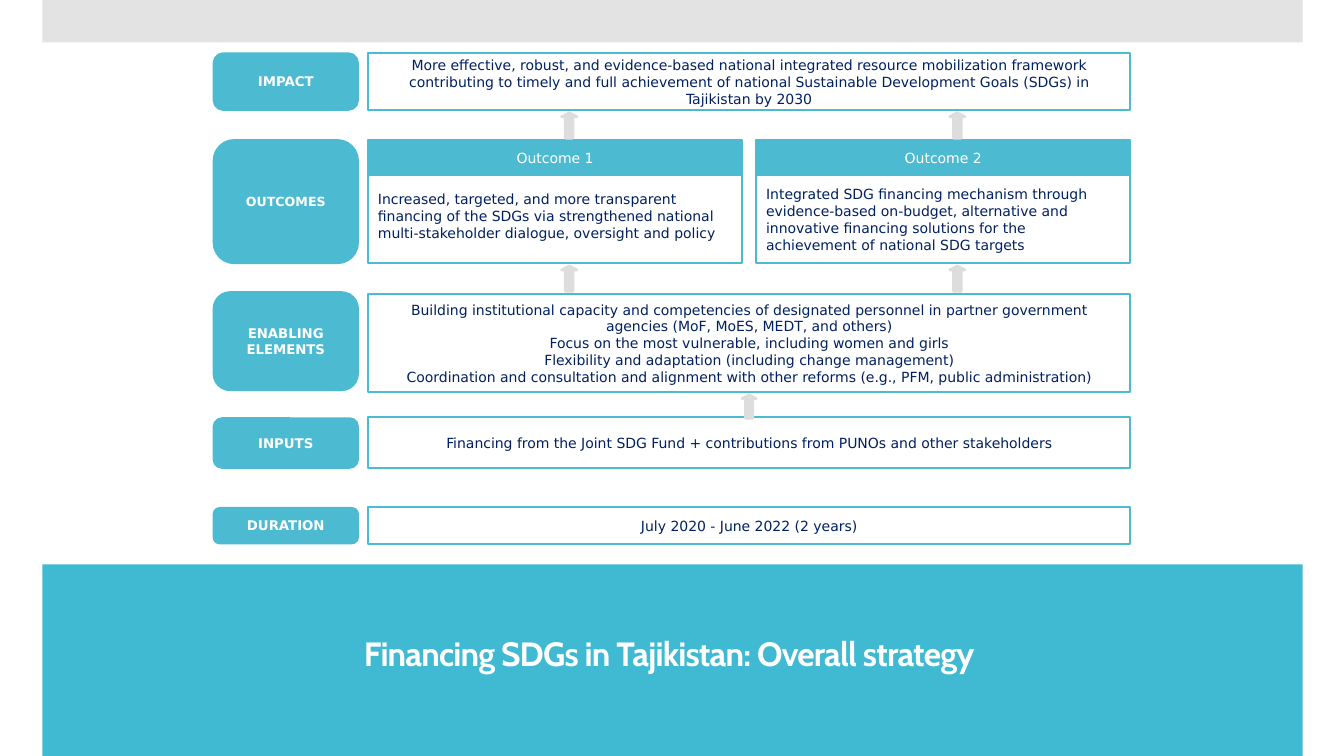
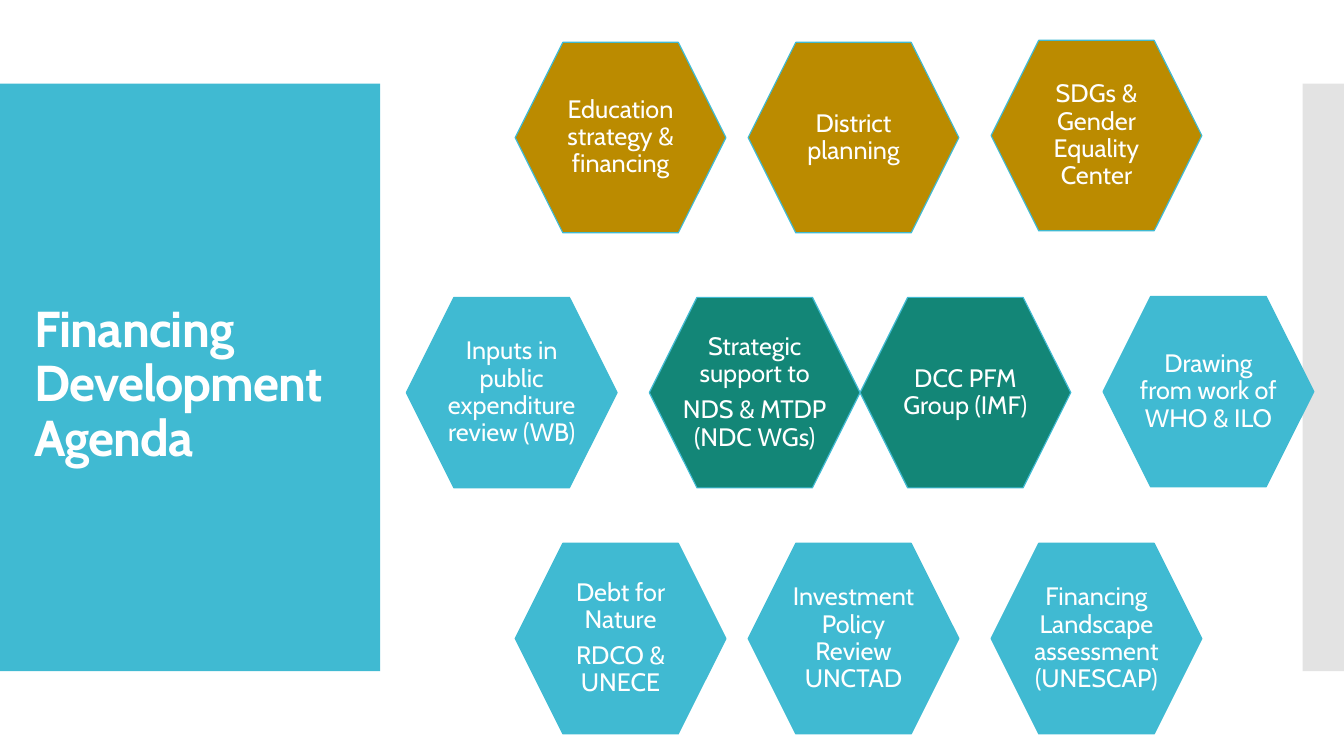
from pptx import Presentation
from pptx import util as u
from pptx.dml import color
from pptx.enum import shapes, text

BLUE = color.RGBColor(0x40, 0xBA, 0xD2)
SKY = color.RGBColor(0x4C, 0xBB, 0xD2)
GOLD = color.RGBColor(0xBB, 0x8B, 0x00)
GREEN = color.RGBColor(0x13, 0x86, 0x77)
NAVY = color.RGBColor(0x00, 0x20, 0x60)
PALE = color.RGBColor(0xE3, 0xE3, 0xE3)
GREY = color.RGBColor(0xDD, 0xDD, 0xDD)
WHITE = color.RGBColor(0xFF, 0xFF, 0xFF)

KIND = shapes.MSO_SHAPE
LEFT, MID = text.PP_ALIGN.LEFT, text.PP_ALIGN.CENTER
HEAD = {"name": "Cabin", "bold": True}
CELL = {"name": "Cabin", "size": u.Pt(18)}
BODY = {"name": "DejaVu Sans", "size": u.Pt(10)}
TAG = {"name": "DejaVu Sans", "size": u.Pt(9.5), "bold": True}
TIGHT = {"line_spacing": 0.9, "space_after": u.Pt(6.3)}

TAG_X, TAG_W = 2.12, 1.43
BOX_X, BOX_W = 3.65, 7.56
HALF_W = 3.71
HALF_XS = (BOX_X, BOX_X + BOX_W - HALF_W)
HEX_W, HEX_H = 2.09, 1.89

ROWS = [
    ("IMPACT", 0.53, 0.56, 0.53, 0.56,
     ["More effective, robust, and evidence-based national integrated resource "
      "mobilization framework contributing to timely and full achievement of "
      "national Sustainable Development Goals (SDGs) in Tajikistan by 2030"]),
    ("OUTCOMES", 1.39, 1.22, 0, 0, []),
    ("ENABLING ELEMENTS", 2.9, 0.97, 2.92, 0.97,
     ["Building institutional capacity and competencies of designated personnel "
      "in partner government agencies (MoF, MoES, MEDT, and others)",
      "Focus on the most vulnerable, including women and girls",
      "Flexibility and adaptation (including change management)",
      "Coordination and consultation and alignment with other reforms "
      "(e.g., PFM, public administration)"]),
    ("INPUTS", 4.15, 0.49, 4.14, 0.5,
     ["Financing from the Joint SDG Fund + contributions from PUNOs and other "
      "stakeholders"]),
    ("DURATION", 5.04, 0.35, 5.03, 0.37, ["July 2020 - June 2022 (2 years)"]),
]

GOALS = [
    ("Outcome 1", 0.11,
     "Increased, targeted, and more transparent financing of the SDGs via "
     "strengthened national multi-stakeholder dialogue, oversight and policy"),
    ("Outcome 2", 0.05,
     "Integrated SDG financing mechanism through evidence-based on-budget, "
     "alternative and innovative financing solutions for the achievement of "
     "national SDG targets"),
]

CELLS = [
    (5.11, 0.42, GOLD, ["Education strategy & financing"]),
    (7.42, 0.42, GOLD, ["District planning"]),
    (9.83, 0.4, GOLD, ["SDGs & Gender Equality Center"]),
    (4.03, 2.95, BLUE, ["Inputs in public expenditure review (WB)"]),
    (6.44, 2.95, GREEN, ["Strategic support to", "NDS & MTDP (NDC WGs)"]),
    (8.53, 2.95, GREEN, ["DCC PFM Group (IMF)"]),
    (10.94, 2.94, BLUE, ["Drawing from work of WHO & ILO"]),
    (5.11, 5.39, BLUE, ["Debt for Nature", "RDCO & UNECE"]),
    (7.42, 5.39, BLUE, ["Investment Policy Review UNCTAD"]),
    (9.83, 5.39, BLUE, ["Financing Landscape assessment (UNESCAP)"]),
]


def put(item, form):
    for key, val in form.items():
        setattr(item, key, val)


def place(item, spot):
    put(item, dict(zip(("left", "top", "width", "height"), map(u.Inches, spot))))


def write(item, lines, font, ink, align=MID, gaps=None, pads=(0.1, 0.05, 0.1, 0.05)):
    frame = item.text_frame
    frame.text = "\n".join(lines)
    put(frame, {"word_wrap": True, "auto_size": text.MSO_AUTO_SIZE.NONE,
                "vertical_anchor": text.MSO_ANCHOR.MIDDLE})
    sides = ("margin_left", "margin_top", "margin_right", "margin_bottom")
    put(frame, dict(zip(sides, map(u.Inches, pads))))
    for para in frame.paragraphs:
        put(para, {"alignment": align, **(gaps or {})})
        for run in para.runs:
            put(run.font, font)
            run.font.color.rgb = ink


def draw(slide, kind, spot, fill=None, line=None, width=1.5):
    item = slide.shapes.add_shape(kind, *map(u.Inches, spot))
    item.shadow.inherit = False
    if fill is None:
        item.fill.background()
    else:
        item.fill.solid()
        item.fill.fore_color.rgb = fill
    if line is None:
        item.line.fill.background()
    else:
        item.line.color.rgb = line
        item.line.width = u.Pt(width)
    return item


def start(deck, words, size, spot, align, main, side):
    slide = deck.slides.add_slide(deck.slide_layouts[5])
    draw(slide, KIND.RECTANGLE, main, BLUE)
    draw(slide, KIND.RECTANGLE, side, PALE)
    title = slide.shapes.title
    place(title, spot)
    write(title, [words], {**HEAD, "size": u.Pt(size)}, WHITE, align,
          {"line_spacing": 0.9})
    title.text_frame.paragraphs[0].runs[0].font._element.set("spc", "-60")
    slide.shapes._spTree.append(title._element)
    return slide


def box(slide, spot, lines, align=MID, foot=0.05):
    item = draw(slide, KIND.RECTANGLE, spot, None, SKY)
    write(item, lines, BODY, NAVY, align, pads=(0.1, 0.05, 0.1, foot))


def tag(slide, top, high, words):
    item = draw(slide, KIND.ROUNDED_RECTANGLE, (TAG_X, top, TAG_W, high), SKY, SKY)
    size = 9 if words == "OUTCOMES" else 9.5
    write(item, [words], {**TAG, "size": u.Pt(size)}, WHITE)


def goal(slide, left, name, foot, words):
    box(slide, (left, 1.74, HALF_W, 0.87), [words], LEFT, foot)
    head = draw(slide, KIND.RECTANGLE, (left, 1.39, HALF_W, 0.35), SKY, SKY)
    write(head, [name], BODY, WHITE)


def arrow(slide, left, top, wide=0.15, high=0.25):
    item = draw(slide, KIND.UP_ARROW, (left, top, wide, high), GREY, GREY, 2)
    item.adjustments[0], item.adjustments[1] = 0.5, 0.25


def cell(slide, left, top, fill, lines):
    item = draw(slide, KIND.HEXAGON, (left, top, HEX_W, HEX_H), fill, BLUE, 0.85)
    write(item, lines, CELL, WHITE, MID, TIGHT, (0, 0.02, 0, 0.02))


def plan(deck):
    slide = start(deck, "Financing SDGs in Tajikistan: Overall strategy", 24,
                  (0.67, 5.99, 11.93, 1.03), MID,
                  (0.42, 5.6, 12.5, 1.9), (0.42, 0, 12.5, 0.42))
    for name, top, high, box_top, box_high, lines in ROWS:
        tag(slide, top, high, name)
        if lines:
            box(slide, (BOX_X, box_top, BOX_W, box_high), lines)
    for left, (name, foot, words) in zip(HALF_XS, GOALS):
        goal(slide, left, name, foot, words)
        for top in (1.12, 2.64):
            arrow(slide, left + 1.92, top)
    arrow(slide, 7.36, 3.92, 0.14, 0.23)


def agenda(deck):
    slide = start(deck, "Financing Development Agenda", 36,
                  (0.24, 1.31, 3.22, 5.03), LEFT,
                  (0, 0.83, 3.77, 5.83), (12.92, 0.83, 0.42, 5.83))
    for left, top, fill, lines in CELLS:
        cell(slide, left, top, fill, lines)


def main():
    deck = Presentation()
    put(deck, {"slide_width": u.Inches(13.33), "slide_height": u.Inches(7.5)})
    plan(deck)
    agenda(deck)
    deck.save("out.pptx")


if __name__ == "__main__":
    main()
